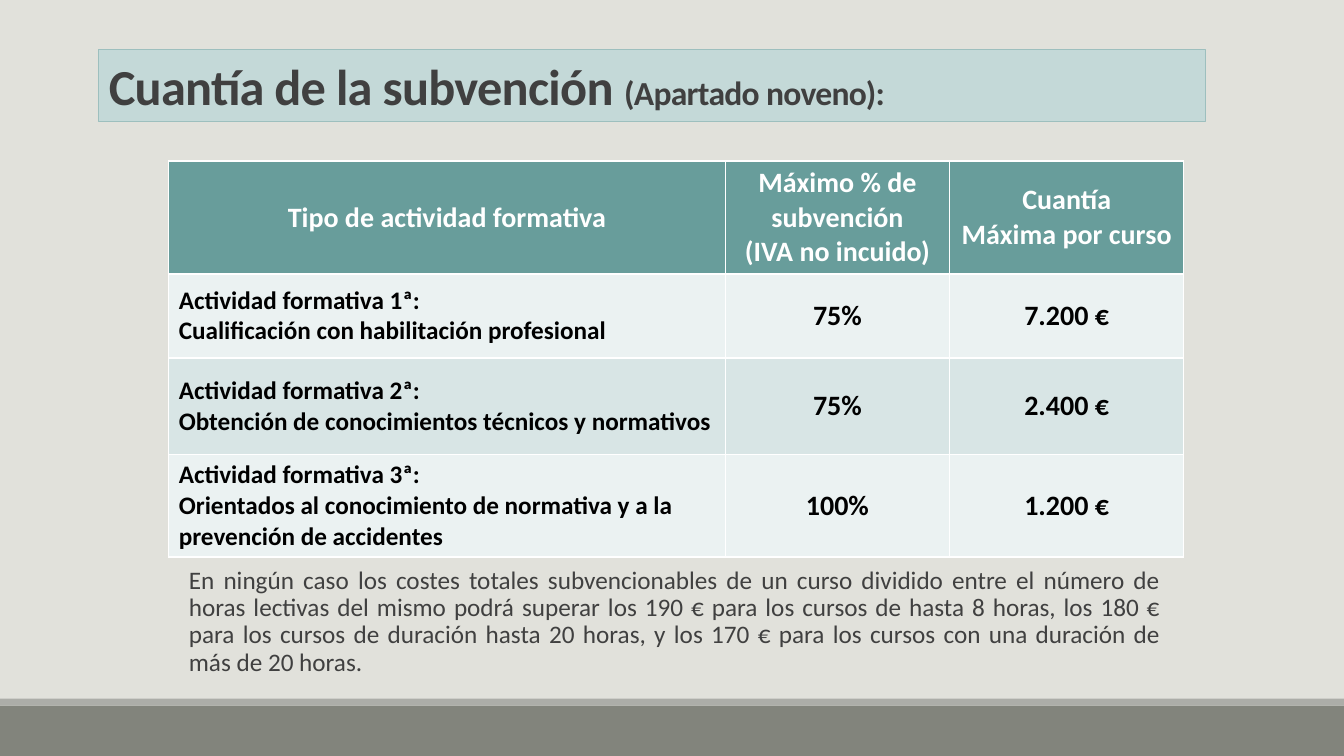
import pptx
import pptx.util
import pptx.dml.color
import pptx.enum.text
import pptx.enum.shapes
import lxml.etree

Pt = pptx.util.Pt
RGBColor = pptx.dml.color.RGBColor
PP_ALIGN = pptx.enum.text.PP_ALIGN
MIDDLE = pptx.enum.text.MSO_ANCHOR.MIDDLE
RECT = pptx.enum.shapes.MSO_SHAPE.RECTANGLE

BACKGROUND = RGBColor(0xE1, 0xE1, 0xDB)
BAR = RGBColor(0x82, 0x84, 0x7C)
STRIPE = RGBColor(0xAC, 0xAD, 0xA8)
TITLE_FILL = RGBColor(0xC4, 0xD9, 0xD8)
TITLE_LINE = RGBColor(0x9D, 0xBF, 0xBE)
HEADER = RGBColor(0x68, 0x9D, 0x9B)
BAND_LIGHT = RGBColor(0xEB, 0xF2, 0xF2)
BAND_DARK = RGBColor(0xD8, 0xE5, 0xE5)
WHITE = RGBColor(0xFF, 0xFF, 0xFF)
BLACK = RGBColor(0, 0, 0)
GREY = RGBColor(0x40, 0x40, 0x40)


def add_text(p, text, size=18, color=GREY, bold=False, align=PP_ALIGN.LEFT):
    p.alignment = align
    r = p.add_run()
    r.text = text
    r.font.name = "Calibri"
    r.font.size = Pt(size)
    r.font.bold = bold
    r.font.color.rgb = color
    return r


prs = pptx.Presentation()
prs.slide_width, prs.slide_height = Pt(960), Pt(540)
s = prs.slides.add_slide(prs.slide_layouts[5])
s.background.fill.solid()
s.background.fill.fore_color.rgb = BACKGROUND

for top, height, color in [(504, 36, BAR), (499, 5, STRIPE)]:
    sp = s.shapes.add_shape(RECT, 0, Pt(top), Pt(960), Pt(height))
    sp.shadow.inherit = False
    sp.fill.solid()
    sp.fill.fore_color.rgb = color
    sp.line.fill.background()

rows = [
    ("Tipo de actividad formativa", "Máximo % de subvención\n(IVA no incuido)", "Cuantía\nMáxima por curso"),
    ("Actividad formativa 1ª:\nCualificación con habilitación profesional", "75%", "7.200 €"),
    ("Actividad formativa 2ª:\nObtención de conocimientos técnicos y normativos", "75%", "2.400 €"),
    ("Actividad formativa 3ª:\nOrientados al conocimiento de normativa y a la prevención de accidentes", "100%", "1.200 €"),
]
row_heights = [76, 60, 69, 53]
row_fills = [HEADER, BAND_LIGHT, BAND_DARK, BAND_LIGHT]
col_widths = [397.5, 160.5, 167]
table = s.shapes.add_table(4, 3, Pt(120.5), Pt(115), Pt(sum(col_widths)), Pt(sum(row_heights))).table
for col, width in zip(table.columns, col_widths):
    col.width = Pt(width)
for i, texts in enumerate(rows):
    table.rows[i].height = Pt(row_heights[i])
    for j, text in enumerate(texts):
        cell = table.cell(i, j)
        cell.fill.solid()
        cell.fill.fore_color.rgb = row_fills[i]
        cell.vertical_anchor = MIDDLE
        activity = i > 0 and j == 0
        for k, line in enumerate(text.split("\n")):
            p = cell.text_frame.add_paragraph() if k else cell.text_frame.paragraphs[0]
            add_text(p, line, size=18 if activity else 20, color=BLACK if i else WHITE,
                     bold=True, align=PP_ALIGN.LEFT if activity else PP_ALIGN.CENTER)

tf = s.shapes.add_textbox(Pt(120.5), Pt(402), Pt(715.5), Pt(86.5)).text_frame
tf.word_wrap = True
p = tf.paragraphs[0]
p.line_spacing = 0.9
p.space_after = Pt(2)
add_text(
    p,
    "En ningún caso los costes totales subvencionables de un curso dividido entre el número de horas "
    "lectivas del mismo podrá superar los 190 € para los cursos de hasta 8 horas, los 180 € para los "
    "cursos de duración hasta 20 horas, y los 170 € para los cursos con una duración de más de 20 horas.",
    align=PP_ALIGN.JUSTIFY,
)
tf.margin_left = Pt(14.4)

sp = s.shapes.title
sp.left, sp.top, sp.width, sp.height = Pt(70.5), Pt(35.5), Pt(790.5), Pt(51)
sp.fill.solid()
sp.fill.fore_color.rgb = TITLE_FILL
sp.line.color.rgb = TITLE_LINE
sp.line.width = Pt(0.75)
tf = sp.text_frame
tf.auto_size = pptx.enum.text.MSO_AUTO_SIZE.NONE
tf.word_wrap = True
tf.vertical_anchor = MIDDLE
for text, size in [("Cuantía de la subvención ", 36), ("(Apartado noveno):", 24)]:
    r = add_text(tf.paragraphs[0], text, size=size, bold=True)
    r.font._element.set("spc", "-50")

prs.save("out.pptx")
